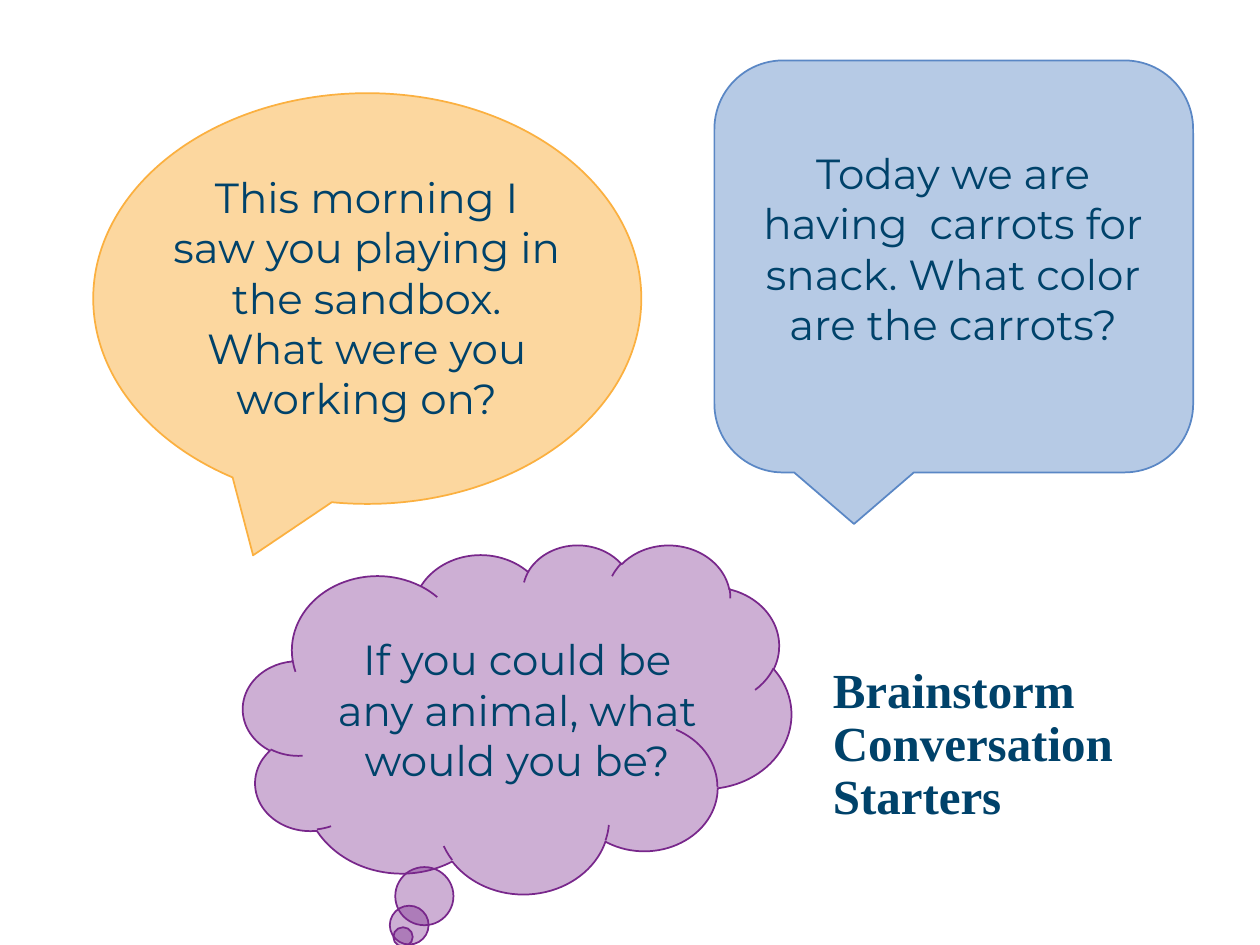
import dataclasses

import pptx
import pptx.dml.color
import pptx.enum.shapes
import pptx.enum.text
import pptx.oxml
import pptx.oxml.ns
import pptx.util

RGB = pptx.dml.color.RGBColor
KIND = pptx.enum.shapes.MSO_SHAPE
ALIGN = pptx.enum.text.PP_ALIGN
ANCHOR = pptx.enum.text.MSO_ANCHOR
FIT = pptx.enum.text.MSO_AUTO_SIZE

PX = 9144  # EMU per px, 100 px to the inch
NAVY = RGB(0x00, 0x42, 0x6A)
GOLD = RGB(0xFB, 0xB0, 0x40)
BLUE = RGB(0x5A, 0x87, 0xC5)
PLUM = RGB(0x78, 0x27, 0x8B)

BODY = {"name": "Montserrat", "size": pptx.util.Pt(24), "bold": False}
HEAD = {"name": "Times New Roman", "size": pptx.util.Pt(28), "bold": True}


@dataclasses.dataclass
class Box:
    left: int
    top: int
    width: int
    height: int

    def emu(self) -> list[int]:
        return [side * PX for side in dataclasses.astuple(self)]


@dataclasses.dataclass
class Bubble:
    kind: KIND
    color: RGB
    alpha: int  # percent opaque
    box: Box
    words: str
    area: Box


BUBBLES = [
    Bubble(KIND.OVAL_CALLOUT, GOLD, 50, Box(74, 74, 435, 326),
           "This morning I saw you playing in the sandbox. "
           "What were you working on?", Box(127, 131, 328, 212)),
    Bubble(KIND.ROUNDED_RECTANGULAR_CALLOUT, BLUE, 44, Box(567, 48, 380, 327),
           "Today we are having  carrots for snack. "
           "What color are the carrots?", Box(595, 112, 323, 172)),
    Bubble(KIND.CLOUD_CALLOUT, PLUM, 37, Box(193, 432, 435, 277),
           "If you could be any animal, what would you be?",
           Box(254, 498, 313, 131)),
]


def write(frame, words: str, style: dict, align: ALIGN) -> None:
    frame.word_wrap = True
    para = frame.paragraphs[0]
    para.alignment = align
    run = para.add_run()
    run.text = words
    for key, value in style.items():
        setattr(run.font, key, value)
    run.font.color.rgb = NAVY


def draw(slide, item: Bubble) -> None:
    # Tinted callout
    shape = slide.shapes.add_shape(item.kind, *item.box.emu())
    shape.shadow.inherit = False
    shape.fill.solid()
    shape.fill.fore_color.rgb = item.color
    tint = shape.fill._xPr.find(".//" + pptx.oxml.ns.qn("a:srgbClr"))
    tint.append(pptx.oxml.parse_xml(
        f'<a:alpha {pptx.oxml.ns.nsdecls("a")} val="{item.alpha * 1000}"/>'))
    shape.line.color.rgb = item.color
    shape.line.width = pptx.util.Pt(1)

    # Its question
    frame = slide.shapes.add_textbox(*item.area.emu()).text_frame
    write(frame, item.words, BODY, ALIGN.CENTER)
    frame.auto_size = FIT.SHAPE_TO_FIT_TEXT


def head(slide, words: str, box: Box) -> None:
    title = slide.shapes.title
    for key, value in zip(("left", "top", "width", "height"), box.emu()):
        setattr(title, key, value)
    frame = title.text_frame
    write(frame, words, HEAD, ALIGN.LEFT)
    frame.auto_size = FIT.NONE
    frame.vertical_anchor = ANCHOR.MIDDLE
    frame.paragraphs[0].line_spacing = 0.9


def main() -> None:
    deck = pptx.Presentation()
    deck.slide_width, deck.slide_height = 1000 * PX, 750 * PX
    slide = deck.slides.add_slide(deck.slide_layouts[5])
    head(slide, "Brainstorm Conversation Starters", Box(651, 519, 313, 145))
    for item in BUBBLES:
        draw(slide, item)
    deck.save("out.pptx")


if __name__ == "__main__":
    main()
